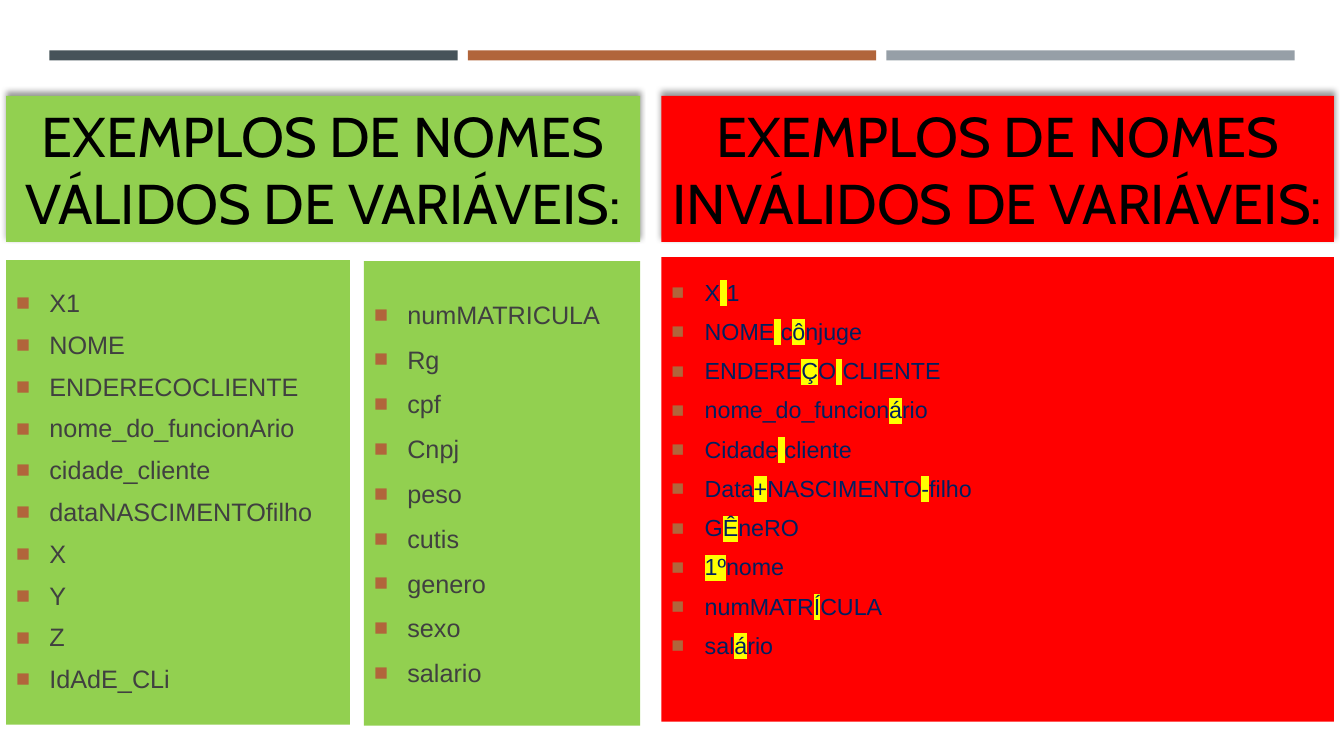
from dataclasses import dataclass

from lxml import etree
from pptx import Presentation
from pptx import util as u
from pptx.dml.color import RGBColor
from pptx.enum import shapes, text
from pptx.oxml import parse_xml
from pptx.oxml.ns import nsdecls, qn


@dataclass(frozen=True)
class Theme:
    valid: str = "92D050"
    invalid: str = "FF0000"
    bullet: str = "B1653B"
    heading_ink: str = "000000"
    valid_ink: str = "404040"
    invalid_ink: str = "002060"
    mark: str = "FFFF00"
    bars: tuple[str, ...] = ("465359", "B1653B", "969FA7")
    heading_font: str = "Cabin"
    list_font: str = "Arial"
    heading_size: float = 40
    valid_size: float = 18
    invalid_size: float = 16.6


@dataclass(frozen=True)
class Box:
    left: float
    top: float
    width: float
    height: float


@dataclass(frozen=True)
class Heading:
    slot: int
    box: Box
    fill: str
    wording: str


@dataclass(frozen=True)
class NameList:
    slot: int
    box: Box
    fill: str
    ink: str
    size: float
    names: tuple[str, ...]
    line_spacing: float = 0.9
    space_before: float = 4.4
    bottom_inset: float = 0.05


THEME = Theme()

HEADINGS = (
    Heading(0, Box(0.06, 0.95, 6.29, 1.45), THEME.valid,
            "EXEMPLOS DE NOMES VÁLIDOS DE VARIÁVEIS:"),
    Heading(1, Box(6.56, 0.95, 6.67, 1.45), THEME.invalid,
            "EXEMPLOS DE NOMES INVÁLIDOS DE VARIÁVEIS:"),
)

NAME_LISTS = (
    NameList(2, Box(0.06, 2.58, 3.41, 4.61), THEME.valid, THEME.valid_ink, THEME.valid_size,
             ("X1", "NOME", "ENDERECOCLIENTE", "nome_do_funcionArio", "cidade_cliente",
              "dataNASCIMENTOfilho", "X", "Y", "Z", "IdAdE_CLi")),
    NameList(3, Box(3.61, 2.59, 2.74, 4.61), THEME.valid, THEME.valid_ink, THEME.valid_size,
             ("numMATRICULA", "Rg", "cpf", "Cnpj", "peso", "cutis", "genero", "sexo", "salario"),
             line_spacing=1.0),
    NameList(4, Box(6.56, 2.55, 6.67, 4.61), THEME.invalid, THEME.invalid_ink,
             THEME.invalid_size,
             ("X| |1", "NOME| |c|ô|njuge", "ENDERE|Ç|O| |CLIENTE", "nome_do_funcion|á|rio",
              "Cidade| |cliente", "Data|+|NASCIMENTO|-|filho", "G|Ê|neRO", "|1º|nome",
              "numMATR|Í|CULA", "sal|á|rio"),
             space_before=4.1, bottom_inset=0.43),
)


def place(part, box: Box, fill: str) -> None:
    part.left, part.top = u.Inches(box.left), u.Inches(box.top)
    part.width, part.height = u.Inches(box.width), u.Inches(box.height)
    part.fill.solid()
    part.fill.fore_color.rgb = RGBColor.from_string(fill)
    part.line.fill.background()


def prepare_frame(part):
    frame = part.text_frame
    frame.word_wrap = True
    frame.auto_size = text.MSO_AUTO_SIZE.NONE
    frame.vertical_anchor = text.MSO_ANCHOR.MIDDLE
    return frame


def style_run(run, font: str, size: float, ink: str) -> None:
    run.font.name = font
    run.font.size = u.Pt(size)
    run.font.bold = False
    run.font.color.rgb = RGBColor.from_string(ink)


def highlight(run) -> None:
    mark = parse_xml(
        f'<a:highlight {nsdecls("a")}><a:srgbClr val="{THEME.mark}"/></a:highlight>')
    run.font.fill.fore_color
    run.font._element.find(qn("a:latin")).addprevious(mark)


def add_bullet(paragraph) -> None:
    properties = paragraph._p.get_or_add_pPr()
    properties.set("marL", str(u.Inches(0.33)))
    properties.set("indent", str(-u.Inches(0.33)))
    color = etree.SubElement(properties, qn("a:buClr"))
    etree.SubElement(color, qn("a:srgbClr"), val=THEME.bullet)
    etree.SubElement(properties, qn("a:buSzPct"), val="92000")
    etree.SubElement(properties, qn("a:buFont"), typeface=THEME.list_font)
    etree.SubElement(properties, qn("a:buChar"), char="■")


def draw_bars(slide) -> None:
    for column, color in enumerate(THEME.bars):
        bar = slide.shapes.add_shape(shapes.MSO_SHAPE.RECTANGLE, 0, 0, 0, 0)
        place(bar, Box(0.49 + 4.15 * column, 0.5, 4.05, 0.1), color)
        bar.shadow.inherit = False


def draw_heading(slide, heading: Heading) -> None:
    banner = slide.placeholders[heading.slot]
    place(banner, heading.box, heading.fill)
    banner._element.spPr.append(parse_xml(
        f'<a:effectLst {nsdecls("a")}>'
        f'<a:outerShdw blurRad="{u.Pt(4)}" dist="{u.Pt(3)}" dir="16200000" rotWithShape="0">'
        '<a:srgbClr val="000000"><a:alpha val="40000"/></a:srgbClr>'
        '</a:outerShdw></a:effectLst>'))
    frame = prepare_frame(banner)
    frame.text = heading.wording
    wording = frame.paragraphs[0]
    wording.alignment = text.PP_ALIGN.CENTER
    wording.space_before = u.Pt(0)
    style_run(wording.runs[0], THEME.heading_font, THEME.heading_size, THEME.heading_ink)


def draw_names(slide, name_list: NameList) -> None:
    panel = slide.placeholders[name_list.slot]
    place(panel, name_list.box, name_list.fill)
    frame = prepare_frame(panel)
    frame.margin_bottom = u.Inches(name_list.bottom_inset)
    frame.text = "\n".join(name_list.names)
    for name in frame.paragraphs:
        pieces = name.text.split("|")
        name.clear()
        name.alignment = text.PP_ALIGN.LEFT
        name.line_spacing = name_list.line_spacing
        name.space_before = u.Pt(name_list.space_before)
        name.space_after = u.Pt(6)
        add_bullet(name)
        for order, piece in enumerate(pieces):
            if not piece:
                continue
            run = name.add_run()
            run.text = piece
            style_run(run, THEME.list_font, name_list.size, name_list.ink)
            if order % 2:
                highlight(run)


def main() -> None:
    deck = Presentation()
    deck.slide_width, deck.slide_height = u.Inches(13.33), u.Inches(7.5)
    slide = deck.slides.add_slide(deck.slide_layouts[4])
    draw_bars(slide)
    for heading in HEADINGS:
        draw_heading(slide, heading)
    for name_list in NAME_LISTS:
        draw_names(slide, name_list)
    deck.save("out.pptx")


if __name__ == "__main__":
    main()
